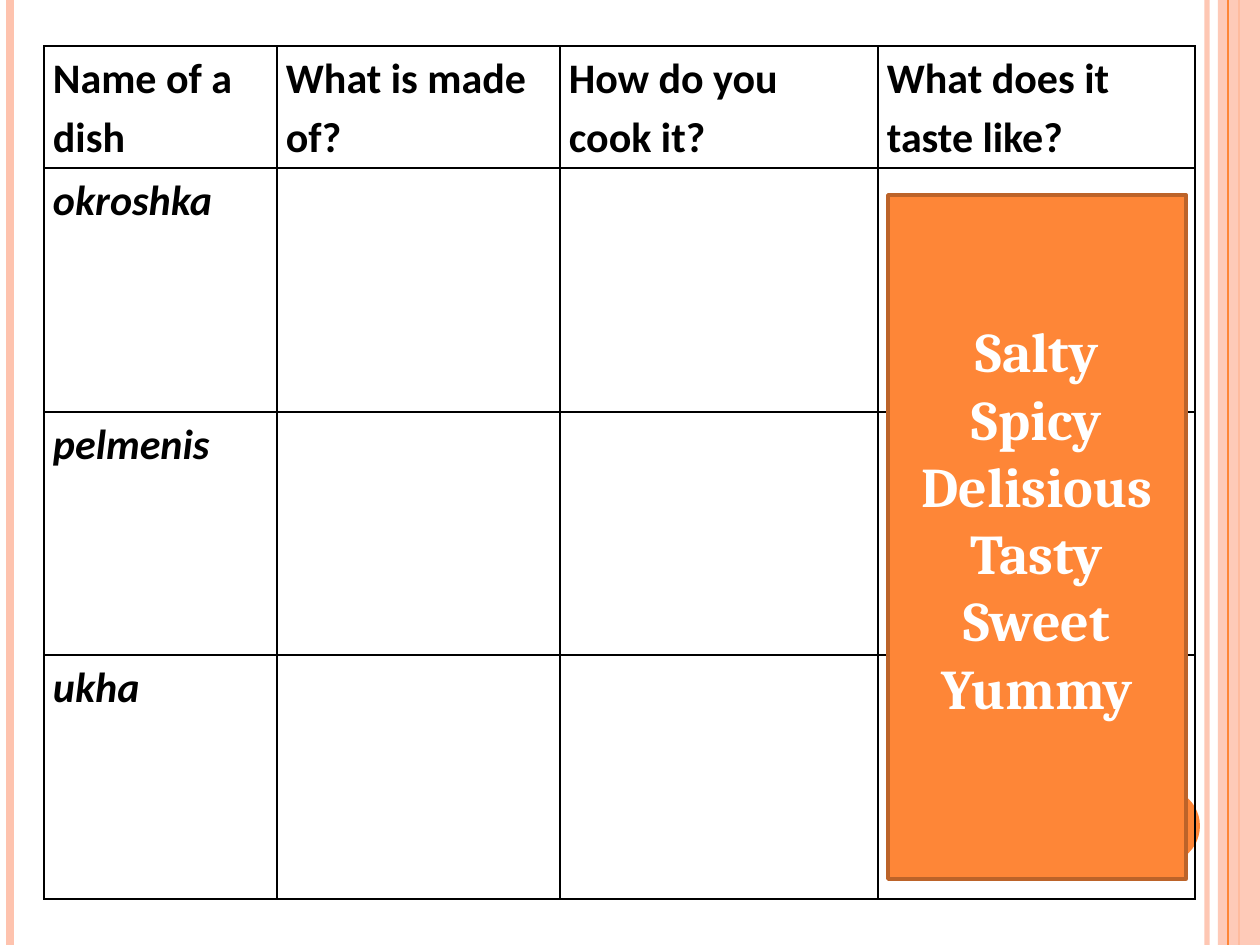
from lxml import etree
from pptx import Presentation
from pptx.dml.color import RGBColor
from pptx.enum.shapes import MSO_CONNECTOR, MSO_SHAPE
from pptx.enum.text import MSO_ANCHOR, PP_ALIGN
from pptx.oxml.ns import qn
from pptx.util import Emu, Pt

STRAIGHT = MSO_CONNECTOR.STRAIGHT
RECTANGLE = MSO_SHAPE.RECTANGLE
OVAL = MSO_SHAPE.OVAL
MIDDLE = MSO_ANCHOR.MIDDLE
CENTER = PP_ALIGN.CENTER

EMU_PER_PX = 914400 / 126
WIDTH, HEIGHT = 1260, 945
ORANGE, PEACH, RUST = "FE8637", "FEC3AE", "BC6329"
BLACK, WHITE = "000000", "FFFFFF"

STRIPES = [
    (1207, PEACH, 3, 93),
    (10, PEACH, 4.5, 100),
    (1239, ORANGE, 1.5, 100),
]
COLUMN_WIDTHS = [233, 283, 318, 317]
ROW_HEIGHTS = [122, 244, 243, 244]
QUESTIONS = ["Name of a dish", "What is made of?", "How do you cook it?", "What does it taste like?"]
DISHES = ["okroshka", "pelmenis", "ukha"]
TASTES = ["Salty", "Spicy", "Delisious", "Tasty", "Sweet", "Yummy"]


def px(length):
    return Emu(round(length * EMU_PER_PX))


def color(hex_code):
    return RGBColor.from_string(hex_code)


class SlideBuilder:
    table_font = "Calibri"
    panel_font = "Cambria"

    def __init__(self, slide):
        self.slide = slide
        self.shapes = slide.shapes

    def background(self, hex_code):
        fill = self.slide.background.fill
        fill.solid()
        fill.fore_color.rgb = color(hex_code)

    def set_opacity(self, element, percent):
        if percent < 100:
            for tint in element.iter(qn("a:srgbClr")):
                etree.SubElement(tint, qn("a:alpha"), val=str(percent * 1000))

    def stripe(self, x, hex_code, weight, opacity):
        line = self.shapes.add_connector(STRAIGHT, px(x), px(0), px(x), px(HEIGHT))
        line.line.color.rgb = color(hex_code)
        line.line.width = Pt(weight)
        properties = line._element.spPr
        self.set_opacity(properties, opacity)
        etree.SubElement(properties, qn("a:effectLst"))

    def block(self, kind, box, hex_code, outline=None, opacity=100):
        shape = self.shapes.add_shape(kind, *map(px, box))
        shape.shadow.inherit = False
        shape.fill.solid()
        shape.fill.fore_color.rgb = color(hex_code)
        self.set_opacity(shape._element.spPr, opacity)
        if outline:
            shape.line.color.rgb = color(outline)
            shape.line.width = Pt(2)
        else:
            shape.line.fill.background()
        return shape

    def style_text(self, paragraph, text, font, size, hex_code, italic=False):
        paragraph.text = text
        paragraph.font.name = font
        paragraph.font.size = Pt(size)
        paragraph.font.bold = True
        paragraph.font.italic = italic
        paragraph.font.color.rgb = color(hex_code)

    def word_panel(self, box, words):
        panel = self.block(RECTANGLE, box, ORANGE, RUST)
        frame = panel.text_frame
        frame.word_wrap = True
        frame.vertical_anchor = MIDDLE
        frame.margin_bottom = px(43)
        for index, word in enumerate(words):
            paragraph = frame.add_paragraph() if index else frame.paragraphs[0]
            self.style_text(paragraph, word, self.panel_font, 32, WHITE)
            paragraph.alignment = CENTER

    def border(self, cell):
        properties = cell._tc.get_or_add_tcPr()
        for side in ("lnL", "lnR", "lnT", "lnB"):
            edge = etree.SubElement(properties, qn(f"a:{side}"), w=str(Pt(1)))
            paint = etree.SubElement(edge, qn("a:solidFill"))
            etree.SubElement(paint, qn("a:srgbClr"), val=BLACK)

    def table(self, left, top, widths, heights, rows):
        frame = self.shapes.add_table(
            len(heights), len(widths), px(left), px(top), px(sum(widths)), px(sum(heights))
        )
        grid = frame.table
        grid.first_row = grid.horz_banding = False
        for column, width in zip(grid.columns, widths):
            column.width = px(width)
        for row, height in zip(grid.rows, heights):
            row.height = px(height)
        for row_index, texts in enumerate(rows):
            for column_index, text in enumerate(texts):
                cell = grid.cell(row_index, column_index)
                self.border(cell)
                cell.fill.background()
                cell.margin_left = cell.margin_right = px(9)
                cell.margin_top = cell.margin_bottom = 0
                if text:
                    paragraph = cell.text_frame.paragraphs[0]
                    self.style_text(paragraph, text, self.table_font, 24, BLACK, row_index > 0)
                    paragraph.line_spacing = 1.15


def main():
    deck = Presentation()
    deck.slide_width, deck.slide_height = px(WIDTH), px(HEIGHT)
    builder = SlideBuilder(deck.slides.add_slide(deck.slide_layouts[6]))
    builder.background(WHITE)
    for stripe in STRIPES:
        builder.stripe(*stripe)
    builder.block(RECTANGLE, (1218, 0, 42, HEIGHT), PEACH, opacity=87)
    builder.stripe(1228, ORANGE, 0.75, 100)
    builder.block(OVAL, (1124, 788, 76, 76), ORANGE)
    dish_rows = [[dish, "", "", ""] for dish in DISHES]
    builder.table(44, 46, COLUMN_WIDTHS, ROW_HEIGHTS, [QUESTIONS] + dish_rows)
    builder.word_panel((888, 195, 298, 684), TASTES)
    deck.save("out.pptx")


if __name__ == "__main__":
    main()
